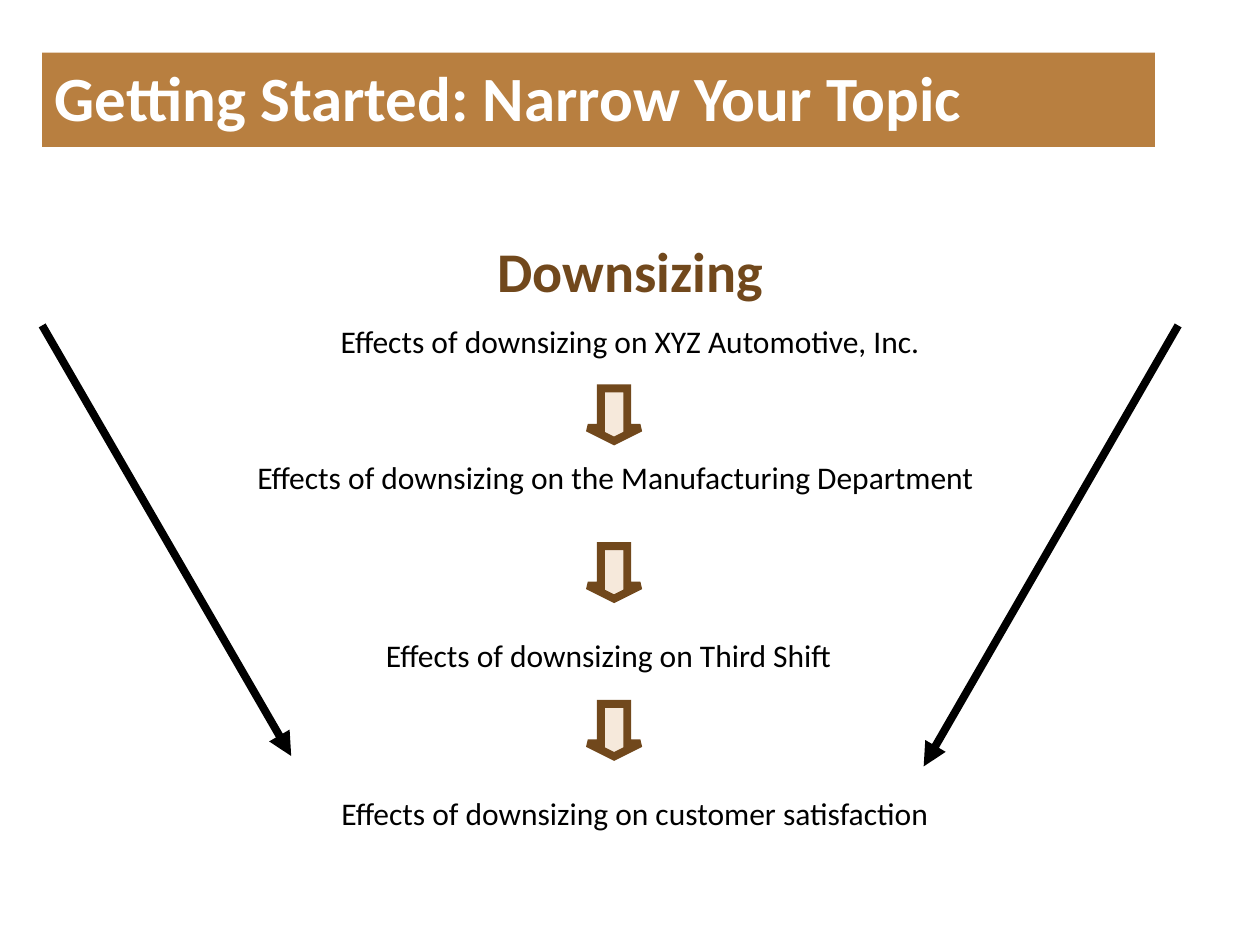
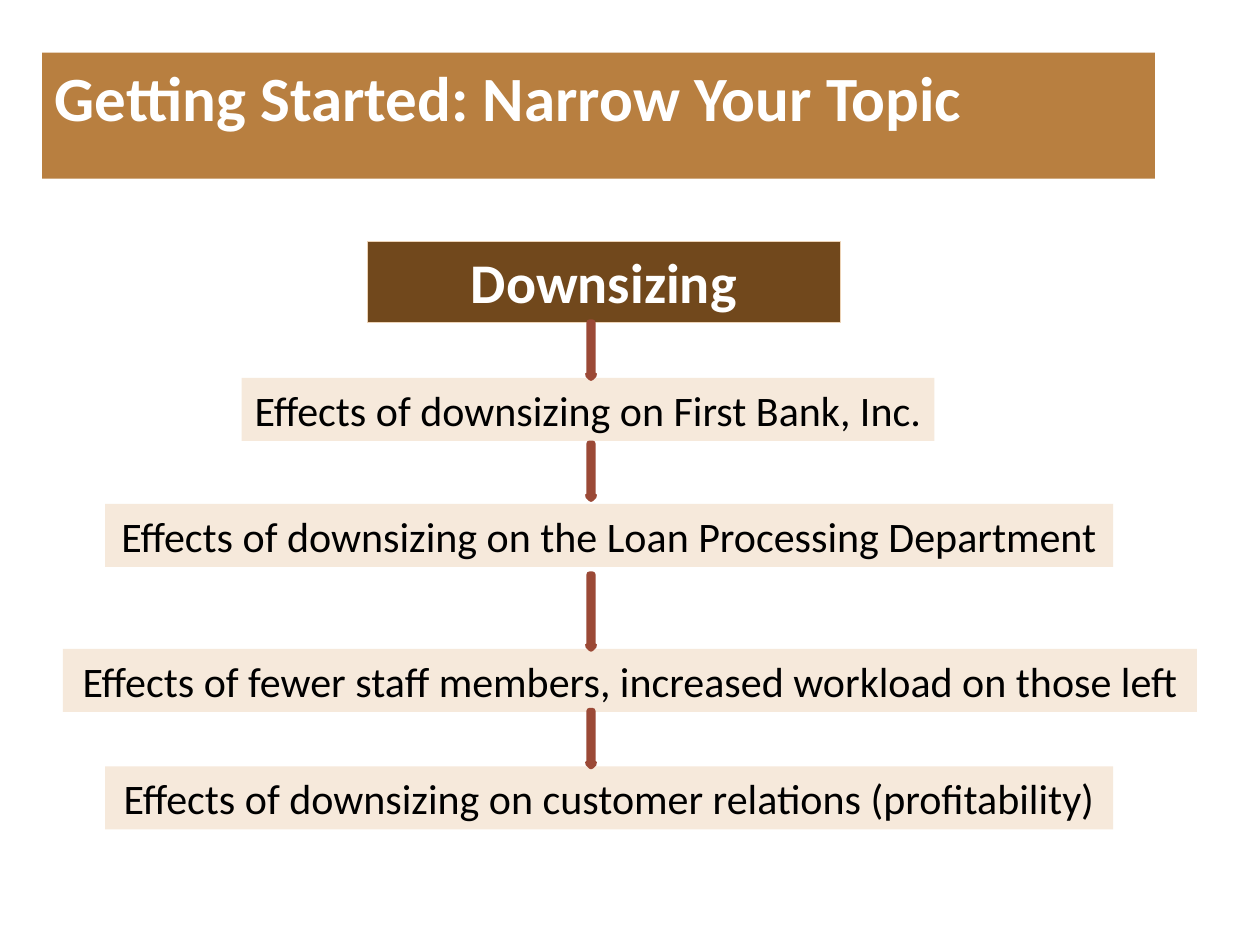
from dataclasses import dataclass

from lxml.etree import SubElement
from pptx import Presentation
from pptx.dml.color import RGBColor
from pptx.enum.shapes import MSO_CONNECTOR as Link, MSO_SHAPE as Preset
from pptx.enum.text import MSO_ANCHOR as Anchor, MSO_AUTO_SIZE as AutoSize, PP_ALIGN as Align
from pptx.oxml.ns import qn
from pptx.util import Cm, Pt

TITLE = "Getting Started: Narrow Your Topic"
TOPIC = "Downsizing"

FUNNEL_BAND_HEIGHT = 1.9
FUNNEL_STEPS = [
    ([TOPIC, "Effects of downsizing on XYZ Automotive, Inc."], (4.45, 4.65, 16.51, 2.77)),
    (["Effects of downsizing on the Manufacturing Department"], (4.37, 9.1, 16.08, 2.16)),
    (["Effects of downsizing on Third Shift"], (5.92, 12.7, 12.7, 1.02)),
    (["Effects of downsizing on customer satisfaction"], (5.28, 15.88, 15.04, 1.02)),
]
FUNNEL_SIDES = [(0.85, 6.56, 5.87, 15.24), (23.75, 6.56, 18.62, 15.45)]
FUNNEL_ARROW = {"left": 11.85, "top": 7.83, "pitch": 3.18, "size": 1.06}

CHAIN_BAND_HEIGHT = 2.54
CHAIN_TOPIC_PLACE = (7.41, 4.87, 9.53, 1.63)
CHAIN_STEP_HEIGHT = 1.27
CHAIN_STEPS = [
    ("Effects of downsizing on First Bank, Inc.", 4.87, 7.62, 13.97),
    ("Effects of downsizing on the Loan Processing Department", 2.12, 10.16, 20.32),
    ("Effects of fewer staff members, increased workload on those left", 1.27, 13.08, 22.86),
    ("Effects of downsizing on customer relations (profitability)", 2.12, 15.45, 20.32),
]
CHAIN_ARROW_LEFT, CHAIN_ARROW_WIDTH = 11.85, 0.13
CHAIN_ARROWS = [(6.5, 1.12), (8.94, 1.12), (11.58, 1.5), (14.33, 1.12)]


def rgb(code):
    return RGBColor.from_string(code)


@dataclass(frozen=True)
class Theme:
    font: str = "Calibri"
    band: RGBColor = rgb("B87F40")
    brown: RGBColor = rgb("71481C")
    cream: RGBColor = rgb("F6E9DB")
    edge: RGBColor = rgb("EDD3B6")
    red: RGBColor = rgb("D16349")
    rust: RGBColor = rgb("9B4936")
    white: RGBColor = rgb("FFFFFF")
    black: RGBColor = rgb("000000")
    title_size: int = 36
    topic_size: int = 32
    chain_size: int = 24
    funnel_size: int = 18
    heavy: float = 4.5


THEME = Theme()


def cms(place):
    return [Cm(value) for value in place]


def write(paragraph, text, size, color, bold=False, align=Align.CENTER):
    paragraph.text = text
    paragraph.alignment = align
    font = paragraph.font
    style = {"name": THEME.font, "size": Pt(size), "bold": bold}
    for key, value in style.items():
        setattr(font, key, value)
    font.color.rgb = color


def frame(holder):
    settings = {"word_wrap": True, "auto_size": AutoSize.NONE, "vertical_anchor": Anchor.TOP}
    for key, value in settings.items():
        setattr(holder.text_frame, key, value)
    return holder.text_frame


def paint(shape, fill, line=None, width=0):
    shape.shadow.inherit = False
    shape.fill.solid()
    shape.fill.fore_color.rgb = fill
    if line is None:
        shape.line.fill.background()
    else:
        shape.line.color.rgb = line
        shape.line.width = Pt(width)


def start_slide(deck, band_height):
    slide = deck.slides.add_slide(deck.slide_layouts[5])
    band = slide.shapes.title
    band.left, band.top, band.width, band.height = cms((0.85, 1.06, 22.43, band_height))
    band.fill.solid()
    band.fill.fore_color.rgb = THEME.band
    write(frame(band).paragraphs[0], TITLE, THEME.title_size, THEME.white, True, Align.LEFT)
    return slide


def add_side(slide, ends):
    side = slide.shapes.add_connector(Link.STRAIGHT, *cms(ends))
    side.line.color.rgb = THEME.black
    side.line.width = Pt(THEME.heavy)
    SubElement(side.line._get_or_add_ln(), qn("a:tailEnd"), type="triangle")
    SubElement(side._element.spPr, qn("a:effectLst"))


def add_arrow(slide, place, fill, line, width):
    arrow = slide.shapes.add_shape(Preset.DOWN_ARROW, *cms(place))
    paint(arrow, fill, line, width)
    return arrow


def add_box(slide, place, text, size, color, fill, bold=False, line=None):
    box = slide.shapes.add_shape(Preset.RECTANGLE, *cms(place))
    paint(box, fill, line, 0.75)
    write(frame(box).paragraphs[0], text, size, color, bold)


def build_funnel(deck):
    slide = start_slide(deck, FUNNEL_BAND_HEIGHT)
    for ends in FUNNEL_SIDES:
        add_side(slide, ends)
    for lines, place in FUNNEL_STEPS:
        step = frame(slide.shapes.add_textbox(*cms(place)))
        for index, text in enumerate(lines):
            paragraph = step.add_paragraph() if index else step.paragraphs[0]
            if text == TOPIC:
                write(paragraph, text, THEME.topic_size, THEME.brown, True)
            else:
                write(paragraph, text, THEME.funnel_size, THEME.black)
            if index:
                paragraph.space_before = Pt(10)
    size = FUNNEL_ARROW["size"]
    for index in range(len(FUNNEL_STEPS) - 1):
        top = FUNNEL_ARROW["top"] + index * FUNNEL_ARROW["pitch"]
        place = (FUNNEL_ARROW["left"], top, size, size)
        arrow = add_arrow(slide, place, THEME.cream, THEME.brown, THEME.heavy)
        arrow.adjustments[0], arrow.adjustments[1] = 0.5, 0.25
        SubElement(arrow.line._get_or_add_ln(), qn("a:miter"), lim="800000")


def build_chain(deck):
    slide = start_slide(deck, CHAIN_BAND_HEIGHT)
    for text, left, top, width in CHAIN_STEPS:
        place = (left, top, width, CHAIN_STEP_HEIGHT)
        add_box(slide, place, text, THEME.chain_size, THEME.black, THEME.cream)
    add_box(slide, CHAIN_TOPIC_PLACE, TOPIC, THEME.topic_size, THEME.white,
            THEME.brown, True, THEME.edge)
    for top, height in CHAIN_ARROWS:
        place = (CHAIN_ARROW_LEFT, top, CHAIN_ARROW_WIDTH, height)
        add_arrow(slide, place, THEME.red, THEME.rust, 3.35)


def main():
    deck = Presentation()
    deck.slide_width, deck.slide_height = Cm(25.4), Cm(19.05)
    build_funnel(deck)
    build_chain(deck)
    deck.save("out.pptx")


if __name__ == "__main__":
    main()
